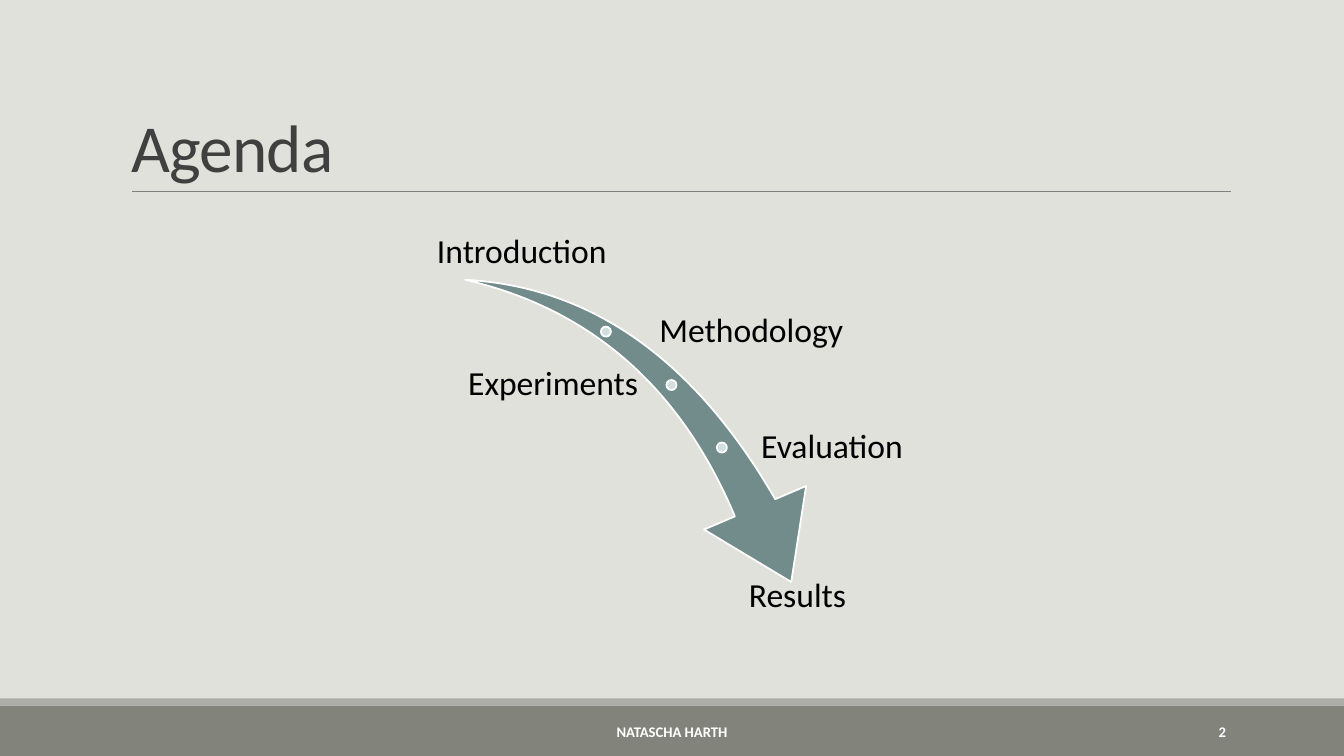
from lxml import etree
from pptx import Presentation
from pptx.dml.color import RGBColor
from pptx.enum.shapes import MSO_CONNECTOR, MSO_SHAPE
from pptx.enum.text import MSO_ANCHOR, MSO_AUTO_SIZE, PP_ALIGN
from pptx.oxml.ns import qn
from pptx.util import Inches, Pt

RECT, OVAL, SWOOSH = MSO_SHAPE.RECTANGLE, MSO_SHAPE.OVAL, MSO_SHAPE.SWOOSH_ARROW
TOP, MIDDLE, BOTTOM = MSO_ANCHOR.TOP, MSO_ANCHOR.MIDDLE, MSO_ANCHOR.BOTTOM
LEFT, CENTER, RIGHT = PP_ALIGN.LEFT, PP_ALIGN.CENTER, PP_ALIGN.RIGHT
TITLE_ONLY = 5


def rgb(hex_color):
    return RGBColor.from_string(hex_color)


def apply(target, formats):
    for name, value in formats.items():
        setattr(target, name, value)


class AgendaSlide:
    """Holds the style and the slide that its methods draw on."""

    FONT = "Calibri"
    BACKGROUND, FOOTER, STRIPE = "E1E1DB", "82847C", "ACADA8"
    RULE, ARROW, DOT, WHITE = "808080", "728C8B", "D1DFDE", "FFFFFF"
    HEADING, BODY = "404040", "000000"

    def __init__(self, presentation):
        layout = presentation.slide_layouts[TITLE_ONLY]
        self.slide = presentation.slides.add_slide(layout)
        fill = self.slide.background.fill
        fill.solid()
        fill.fore_color.rgb = rgb(self.BACKGROUND)

    def set_text(self, holder, text, size, color, anchor, align,
                 bold=False, inset=None, **spacing):
        frame = holder.text_frame
        apply(frame, {"text": text, "word_wrap": True,
                      "auto_size": MSO_AUTO_SIZE.NONE,
                      "vertical_anchor": anchor})
        if inset is not None:
            apply(frame, dict.fromkeys(
                ("margin_left", "margin_top", "margin_right", "margin_bottom"),
                Inches(inset)))
        paragraph = frame.paragraphs[0]
        apply(paragraph, {"alignment": align, **spacing})
        run = paragraph.runs[0]
        apply(run.font, {"name": self.FONT, "size": Pt(size), "bold": bold})
        run.font.color.rgb = rgb(color)
        return run

    def title(self, text, box):
        heading = self.slide.shapes.title
        apply(heading, dict(zip(("left", "top", "width", "height"),
                                map(Inches, box))))
        run = self.set_text(heading, text, 48, self.HEADING, BOTTOM, LEFT,
                            line_spacing=0.85)
        run._r.get_or_add_rPr().set("spc", "-50")

    def text(self, text, box, size, color, anchor, align, **formats):
        holder = self.slide.shapes.add_textbox(*map(Inches, box))
        self.set_text(holder, text, size, color, anchor, align, **formats)

    def label(self, text, box, anchor, align):
        self.text(text, box, 24, self.BODY, anchor, align, inset=0.03,
                  line_spacing=0.9, space_after=Pt(8.4))

    def footer(self, text, left, width, align):
        self.text(text, (left, 7.06, width, 0.4), 10.5, self.WHITE,
                  MIDDLE, align, bold=True)

    def shape(self, preset, box, fill, outline=None):
        figure = self.slide.shapes.add_shape(preset, *map(Inches, box))
        figure.shadow.inherit = False
        figure.fill.solid()
        figure.fill.fore_color.rgb = rgb(fill)
        if outline:
            figure.line.color.rgb = rgb(outline)
            figure.line.width = Pt(1.25)
        else:
            figure.line.fill.background()
        return figure

    def rule(self, left, right, y):
        line = self.slide.shapes.add_connector(
            MSO_CONNECTOR.STRAIGHT, *map(Inches, (left, y, right, y)))
        line.line.color.rgb = rgb(self.RULE)
        line.line.width = Pt(0.5)
        etree.SubElement(line._element.spPr, qn("a:effectLst"))

    def arrow(self, box, rotation, adjustments):
        swoosh = self.shape(SWOOSH, box, self.ARROW, self.WHITE)
        swoosh.rotation = rotation
        for index, value in enumerate(adjustments):
            swoosh.adjustments[index] = value

    def milestone(self, text, dot_left, dot_top, label_left, label_width, align):
        """A dot on the arrow with a label centred on its height."""
        dot, height = 0.1, 0.7
        self.shape(OVAL, (dot_left, dot_top, dot, dot), self.DOT, self.WHITE)
        label_top = dot_top + (dot - height) / 2
        self.label(text, (label_left, label_top, label_width, height),
                   MIDDLE, align)


def main():
    presentation = Presentation()
    presentation.slide_width = Inches(13.33)
    presentation.slide_height = Inches(7.5)

    agenda = AgendaSlide(presentation)
    agenda.shape(RECT, (0, 7, 13.33, 0.5), agenda.FOOTER)
    agenda.shape(RECT, (0, 6.93, 13.33, 0.07), agenda.STRIPE)
    agenda.rule(1.31, 12.21, 1.9)
    agenda.title("Agenda", (1.2, 0.31, 11, 1.59))

    agenda.arrow((4.53, 2.89, 3.8, 2.65), 73.3, (0.163, 0.314))
    agenda.label("Introduction", (4.28, 2.02, 1.79, 0.7), BOTTOM, CENTER)
    for milestone in (
        ("Methodology", 5.96, 3.24, 6.51, 2.61, LEFT),
        ("Experiments", 6.61, 3.77, 4.28, 2.08, RIGHT),
        ("Evaluation", 7.11, 4.39, 7.52, 1.6, LEFT),
    ):
        agenda.milestone(*milestone)
    agenda.label("Results", (6.7, 5.71, 2.42, 0.7), TOP, CENTER)

    agenda.footer("NATASCHA HARTH", 4.03, 5.27, CENTER)
    agenda.footer("2", 10.83, 1.43, RIGHT)
    presentation.save("out.pptx")


if __name__ == "__main__":
    main()
